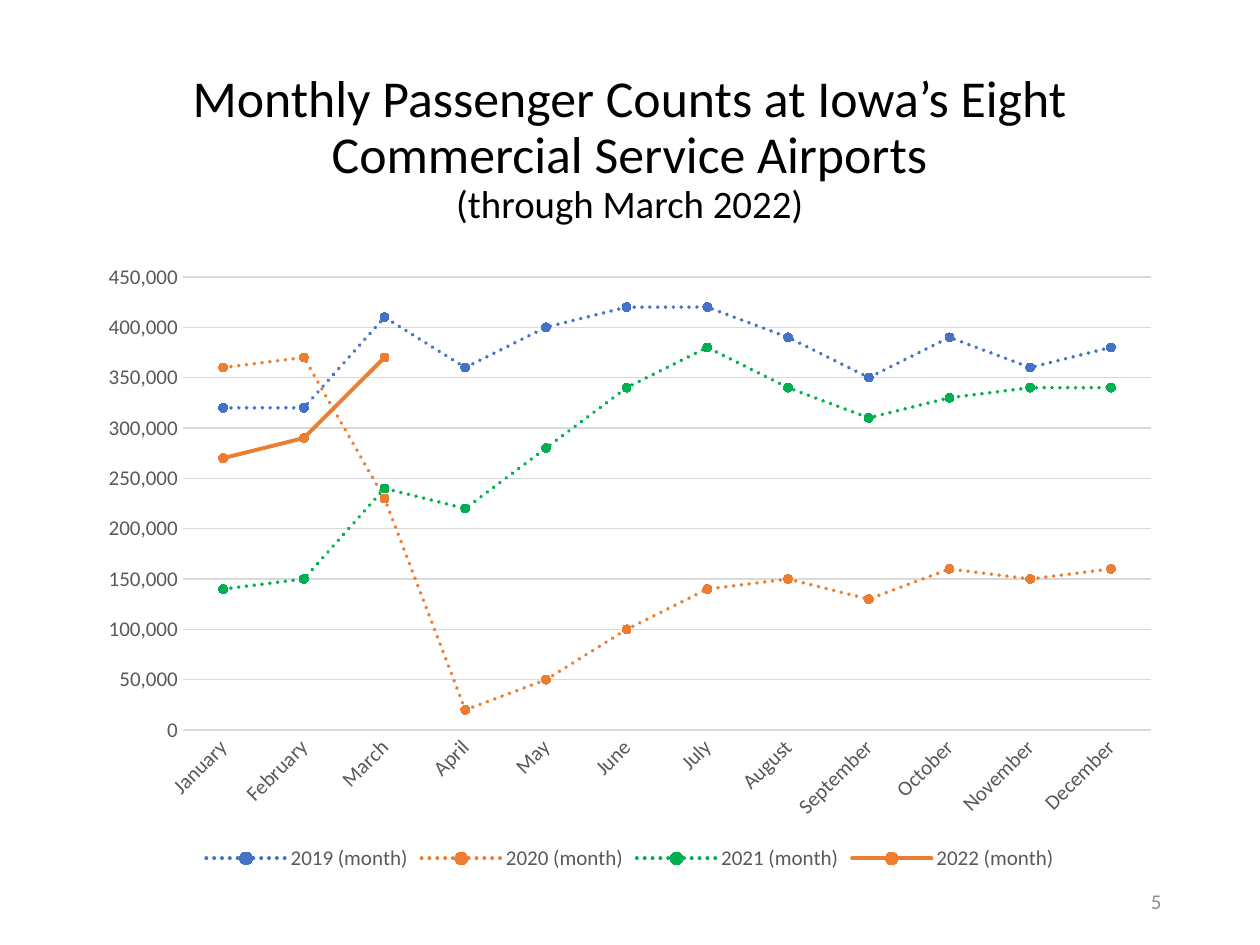
from pptx import Presentation
from pptx import util as u
from pptx.chart.data import CategoryChartData
from pptx.dml.color import RGBColor
from pptx.enum import chart as ch, dml, text

PX = 914400 / 126
FONT = "Calibri"
BLACK = RGBColor(0x00, 0x00, 0x00)
LABEL = RGBColor(0x59, 0x59, 0x59)
GRID = RGBColor(0xD9, 0xD9, 0xD9)
NUMBER = RGBColor(0x8C, 0x8C, 0x8C)
BLUE = RGBColor(0x44, 0x72, 0xC4)
ORANGE = RGBColor(0xED, 0x7D, 0x31)
GREEN = RGBColor(0x00, 0xB0, 0x50)
DOTTED, SOLID = dml.MSO_LINE.ROUND_DOT, dml.MSO_LINE.SOLID

MONTHS = ["January", "February", "March", "April", "May", "June", "July",
          "August", "September", "October", "November", "December"]
# Year, colour, dash, passengers in ten thousands
COUNTS = [
    (2019, BLUE, DOTTED, [32, 32, 41, 36, 40, 42, 42, 39, 35, 39, 36, 38]),
    (2020, ORANGE, DOTTED, [36, 37, 23, 2, 5, 10, 14, 15, 13, 16, 15, 16]),
    (2021, GREEN, DOTTED, [14, 15, 24, 22, 28, 34, 38, 34, 31, 33, 34, 34]),
    (2022, ORANGE, SOLID, [27, 29, 37]),
]


def box(*lengths):
    return [u.Emu(round(n * PX)) for n in lengths]


def style_font(font, size, color):
    font.name = FONT
    font.size = u.Pt(size)
    font.bold = False
    font.color.rgb = color


def style_line(line, color, width):
    line.color.rgb = color
    line.width = u.Pt(width)


def set_title(s, lines, sizes):
    sp = s.shapes.title
    sp.left, sp.top, sp.width, sp.height = box(87, 50, 1086, 183)
    tf = sp.text_frame
    tf.text = "\n".join(lines)
    tf.word_wrap = True
    tf.auto_size = text.MSO_AUTO_SIZE.NONE
    tf.vertical_anchor = text.MSO_ANCHOR.BOTTOM
    for p, size in zip(tf.paragraphs, sizes):
        p.alignment = text.PP_ALIGN.CENTER
        p.line_spacing = 0.9
        p.space_before = u.Pt(0)
        style_font(p.runs[0].font, size, BLACK)


def style_axes(chart):
    months, counts = chart.category_axis, chart.value_axis
    for axis in (months, counts):
        axis.major_tick_mark = axis.minor_tick_mark = ch.XL_TICK_MARK.NONE
        style_font(axis.tick_labels.font, 12, LABEL)
    style_line(months.format.line, GRID, 0.75)
    # Month names slant upwards
    body = months._element.txPr.bodyPr
    body.set("rot", "-2700000")
    body.set("vert", "horz")
    counts.minimum_scale, counts.maximum_scale = 0, 450000
    counts.major_unit = 50000
    counts.tick_labels.number_format = "#,##0"
    counts.tick_labels.number_format_is_linked = False
    counts.format.line.fill.background()
    style_line(counts.major_gridlines.format.line, GRID, 0.75)


def style_series(series, color, dash):
    series.smooth = False
    style_line(series.format.line, color, 2.25)
    series.format.line.dash_style = dash
    # Round caps turn the dashes into dots
    series._element.get_or_add_spPr().get_or_add_ln().set("cap", "rnd")
    marker = series.marker
    marker.style = ch.XL_MARKER_STYLE.CIRCLE
    marker.size = 5
    marker.format.fill.solid()
    marker.format.fill.fore_color.rgb = color
    style_line(marker.format.line, color, 0.75)


def add_passenger_chart(s):
    data = CategoryChartData(number_format="#,##0")
    data.categories = MONTHS
    for year, _, _, counts in COUNTS:
        missing = [None] * (len(MONTHS) - len(counts))
        data.add_series(f"{year} (month)", [n * 10000 for n in counts] + missing)
    chart = s.shapes.add_chart(ch.XL_CHART_TYPE.LINE_MARKERS,
                               *box(87, 252, 1086, 624), data).chart
    chart.has_title = False
    style_font(chart.font, 10, BLACK)
    chart.plots[0].vary_by_categories = False
    style_axes(chart)
    for series, (_, color, dash, _) in zip(chart.plots[0].series, COUNTS):
        style_series(series, color, dash)
    chart.has_legend = True
    chart.legend.position = ch.XL_LEGEND_POSITION.BOTTOM
    chart.legend.include_in_layout = False
    style_font(chart.legend.font, 12, LABEL)


def add_slide_number(s, number):
    tf = s.shapes.add_textbox(*box(890, 876, 284, 50)).text_frame
    tf.word_wrap = True
    tf.vertical_anchor = text.MSO_ANCHOR.MIDDLE
    p = tf.paragraphs[0]
    p.text = number
    p.alignment = text.PP_ALIGN.RIGHT
    style_font(p.runs[0].font, 12, NUMBER)


def main():
    prs = Presentation()
    prs.slide_width, prs.slide_height = u.Inches(10), u.Inches(7.5)
    s = prs.slides.add_slide(prs.slide_layouts[5])
    add_passenger_chart(s)
    add_slide_number(s, "5")
    set_title(s, ["Monthly Passenger Counts at Iowa’s Eight Commercial Service Airports",
                  "(through March 2022)"], [29.6, 22.2])
    prs.save("out.pptx")


if __name__ == "__main__":
    main()
